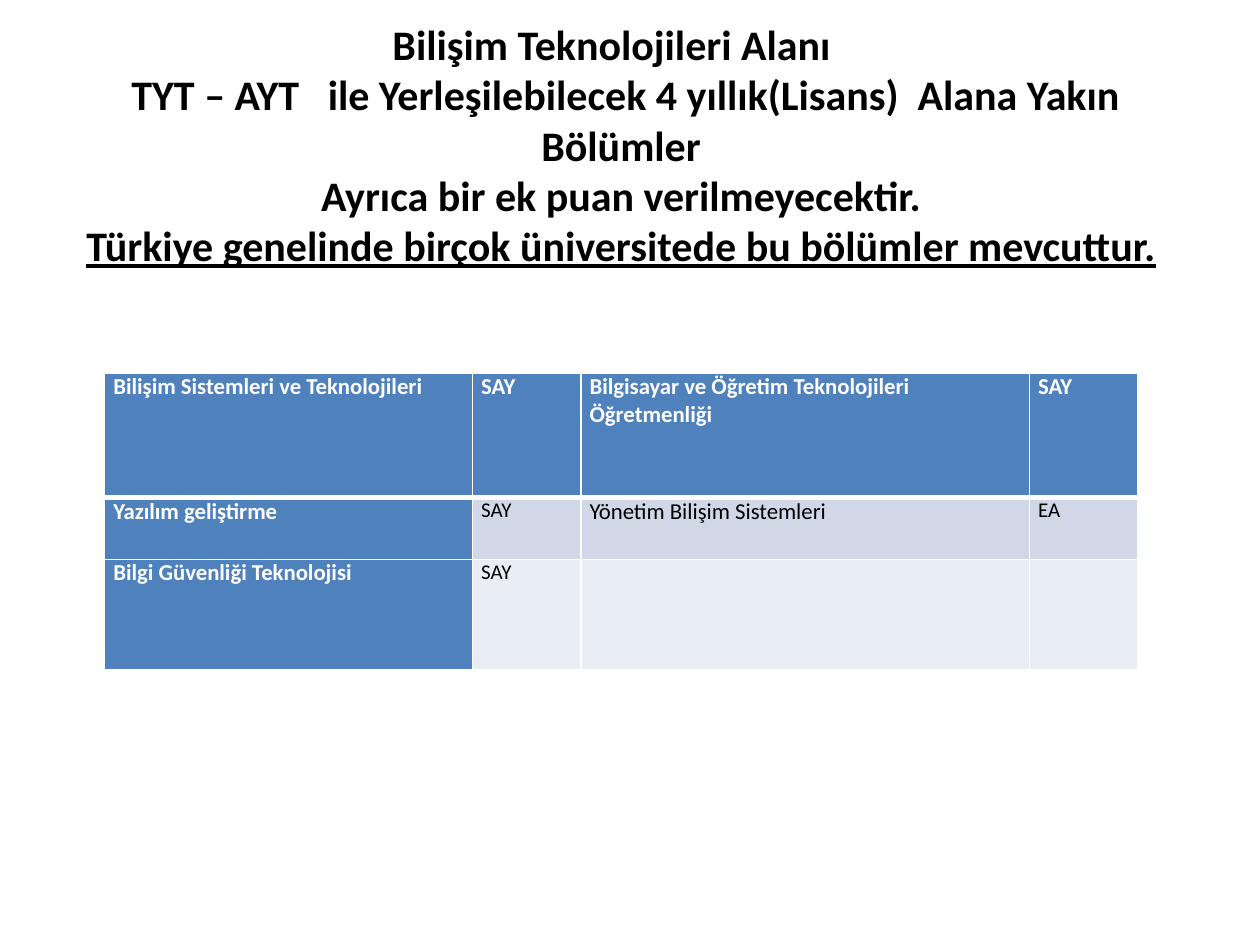
from pptx import Presentation
from pptx.util import Inches, Pt
from pptx.dml.color import RGBColor
from pptx.enum.text import PP_ALIGN, MSO_ANCHOR
from pptx.oxml.ns import qn
from lxml.etree import SubElement

# Content: title lines (text, underlined) and table rows
LINES = [
    ("Bilişim Teknolojileri Alanı  ", False),
    (" TYT – AYT   ile Yerleşilebilecek 4 yıllık(Lisans)  Alana Yakın Bölümler", False),
    ("Ayrıca bir ek puan verilmeyecektir.", False),
    ("Türkiye genelinde birçok üniversitede bu bölümler mevcuttur.", True),
]
ROWS = [
    ("Bilişim Sistemleri ve Teknolojileri", "SAY",
     "Bilgisayar ve Öğretim Teknolojileri Öğretmenliği", "SAY"),
    ("Yazılım geliştirme", "SAY", "Yönetim Bilişim Sistemleri", "EA"),
    ("Bilgi Güvenliği Teknolojisi", "SAY", "", ""),
]
COLS = [2.92, 0.86, 3.56, 0.86]
HIGH = [0.99, 0.49, 0.88]
INK = {"text": "000000", "light": "FFFFFF", "head": "4F81BD",
       "odd": "D0D8E8", "even": "E9EDF4"}
FONT = "Calibri"


def add_run(para, text, size, ink, bold, under=False):
    run = para.add_run()
    run.text = text
    font = run.font
    font.name, font.size, font.bold = FONT, Pt(size), bold
    font.color.rgb = RGBColor.from_string(INK[ink])
    if under:
        font.underline = True


def add_edges(cell, widths):
    """Draw white cell borders; they must come before the fill."""
    props = cell._tc.get_or_add_tcPr()
    for n, (side, width) in enumerate(widths.items()):
        line = SubElement(props, qn("a:" + side), w=str(Pt(width)))
        fill = SubElement(line, qn("a:solidFill"))
        SubElement(fill, qn("a:srgbClr"), val=INK["light"])
        props.insert(n, line)


deck = Presentation()
deck.slide_width, deck.slide_height = Inches(10), Inches(7.5)
slide = deck.slides.add_slide(deck.slide_layouts[6])

# Title: the deep bottom inset lifts the lines above the box centre
box = slide.shapes.add_textbox(Inches(0.43), Inches(0.92), Inches(9), Inches(1.25))
frame = box.text_frame
frame.word_wrap = True
frame.vertical_anchor = MSO_ANCHOR.MIDDLE
frame.margin_top, frame.margin_bottom = Inches(0.05), Inches(0.85)
para = frame.paragraphs[0]
para.alignment = PP_ALIGN.CENTER
for n, (text, under) in enumerate(LINES):
    if n:
        para.add_line_break()
    add_run(para, text, 24, "text", True, under)

# Table: header row and first column are dark, the body is banded
table = slide.shapes.add_table(
    len(ROWS), len(COLS), Inches(0.83), Inches(2.96),
    Inches(sum(COLS)), Inches(sum(HIGH))).table
for col, width in zip(table.columns, COLS):
    col.width = Inches(width)
for r, row in enumerate(ROWS):
    table.rows[r].height = Inches(HIGH[r])
    for c, text in enumerate(row):
        cell = table.cell(r, c)
        head = r == 0 or c == 0
        shade = "head" if head else "odd" if r % 2 else "even"
        cell.fill.solid()
        cell.fill.fore_color.rgb = RGBColor.from_string(INK[shade])
        cell.margin_left = cell.margin_right = Inches(0.07)
        cell.margin_top = cell.margin_bottom = 0
        add_edges(cell, {"lnL": 1, "lnR": 1, "lnT": 3 if r == 1 else 1,
                         "lnB": 3 if r == 0 else 1})
        if text:
            size = 13 if head or c == 2 else 12
            add_run(cell.text_frame.paragraphs[0], text, size,
                    "light" if head else "text", head)

deck.save("out.pptx")
